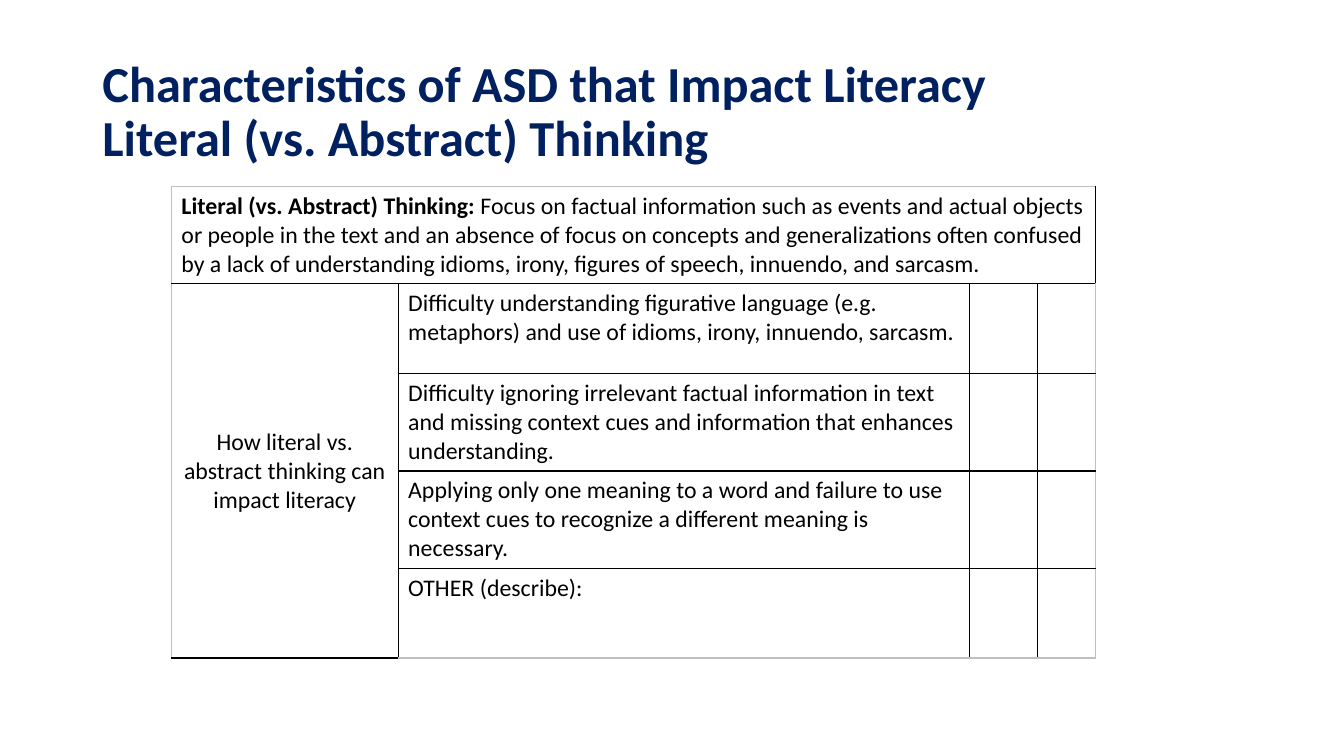
from lxml import etree
from pptx import Presentation
from pptx.dml.color import RGBColor
from pptx.enum import text
from pptx.oxml import ns
from pptx.util import Pt

NAVY = RGBColor(0x00, 0x20, 0x60)
BLACK = RGBColor(0x00, 0x00, 0x00)
GRAY = RGBColor(0xBF, 0xBF, 0xBF)

COLUMN_WIDTHS = [162, 408.25, 48.25, 41.75]
ROW_HEIGHT = 64.08
DEFINITION = [
    ("Literal (vs. Abstract) Thinking: ", True),
    ("Focus on factual information such as events and actual objects or people "
     "in the text and an absence of focus on concepts and generalizations often "
     "confused by a lack of understanding idioms, irony, figures of speech, "
     "innuendo, and sarcasm.", False),
]
QUESTION = "How literal vs. abstract thinking can impact literacy"
IMPACTS = [
    "Difficulty understanding figurative language (e.g. metaphors) and use of "
    "idioms, irony, innuendo, sarcasm.",
    "Difficulty ignoring irrelevant factual information in text and missing "
    "context cues and information that enhances understanding.",
    "Applying only one meaning to a word and failure to use context cues to "
    "recognize a different meaning is necessary.",
    "OTHER (describe):",
]


class SlideBuilder:
    font = "Calibri"
    title_size = Pt(36)
    body_size = Pt(17)

    def __init__(self, prs):
        self.s = prs.slides.add_slide(prs.slide_layouts[5])

    def style(self, p, size, color, bold=None):
        p.font.name = self.font
        p.font.size = size
        p.font.color.rgb = color
        p.font.bold = bold

    def title(self, lines, left, top, width, height):
        sp = self.s.shapes.title
        sp.left, sp.top, sp.width, sp.height = map(Pt, (left, top, width, height))
        tf = sp.text_frame
        tf.word_wrap = True
        tf.auto_size = text.MSO_AUTO_SIZE.NONE
        tf.vertical_anchor = text.MSO_ANCHOR.MIDDLE
        p = tf.paragraphs[0]
        p.alignment = text.PP_ALIGN.LEFT
        p.line_spacing = 0.9
        self.style(p, self.title_size, NAVY, True)
        for i, line in enumerate(lines):
            if i:
                p.add_line_break()
            p.add_run().text = line

    def table(self, left, top, widths, row_height, rows):
        frame = self.s.shapes.add_table(rows, len(widths), Pt(left), Pt(top),
                                        Pt(sum(widths)), Pt(row_height * rows))
        table = frame.table
        table.first_row = table.horz_banding = False
        for column, width in zip(table.columns, widths):
            column.width = Pt(width)
        for row in table.rows:
            row.height = Pt(row_height)
        for i in range(rows):
            for j in range(len(widths)):
                cell = table.cell(i, j)
                cell.fill.background()
                self.style(cell.text_frame.paragraphs[0], self.body_size, BLACK)
                self.borders(cell, {"lnL": j == 0, "lnR": j == len(widths) - 1,
                                    "lnT": i == 0, "lnB": i == rows - 1})
        return table

    def borders(self, cell, edges):
        """Draw each cell side, gray where it lies on the table's outer edge."""
        tc_pr = cell._tc.get_or_add_tcPr()
        for i, (side, outer) in enumerate(edges.items()):
            ln = etree.Element(ns.qn("a:" + side), w=str(Pt(1)))
            fill = etree.SubElement(ln, ns.qn("a:solidFill"))
            etree.SubElement(fill, ns.qn("a:srgbClr"), val=str(GRAY if outer else BLACK))
            tc_pr.insert(i, ln)

    def cell_text(self, cell, runs):
        p = cell.text_frame.paragraphs[0]
        for words, bold in runs:
            r = p.add_run()
            r.text = words
            r.font.bold = bold
        return p


def main():
    prs = Presentation()
    prs.slide_width, prs.slide_height = Pt(960), Pt(540)
    builder = SlideBuilder(prs)
    builder.title(["Characteristics of ASD that Impact Literacy",
                   "Literal (vs. Abstract) Thinking"], 66, 28.75, 828, 104.4)

    table = builder.table(122.4, 133.2, COLUMN_WIDTHS, ROW_HEIGHT, len(IMPACTS) + 1)
    table.cell(0, 0).merge(table.cell(0, len(COLUMN_WIDTHS) - 1))
    builder.cell_text(table.cell(0, 0), DEFINITION)

    question = table.cell(1, 0)
    question.merge(table.cell(len(IMPACTS), 0))
    question.vertical_anchor = text.MSO_ANCHOR.MIDDLE
    builder.cell_text(question, [(QUESTION, False)]).alignment = text.PP_ALIGN.CENTER
    for i, impact in enumerate(IMPACTS, 1):
        builder.cell_text(table.cell(i, 1), [(impact, False)])

    prs.save("out.pptx")


if __name__ == "__main__":
    main()
